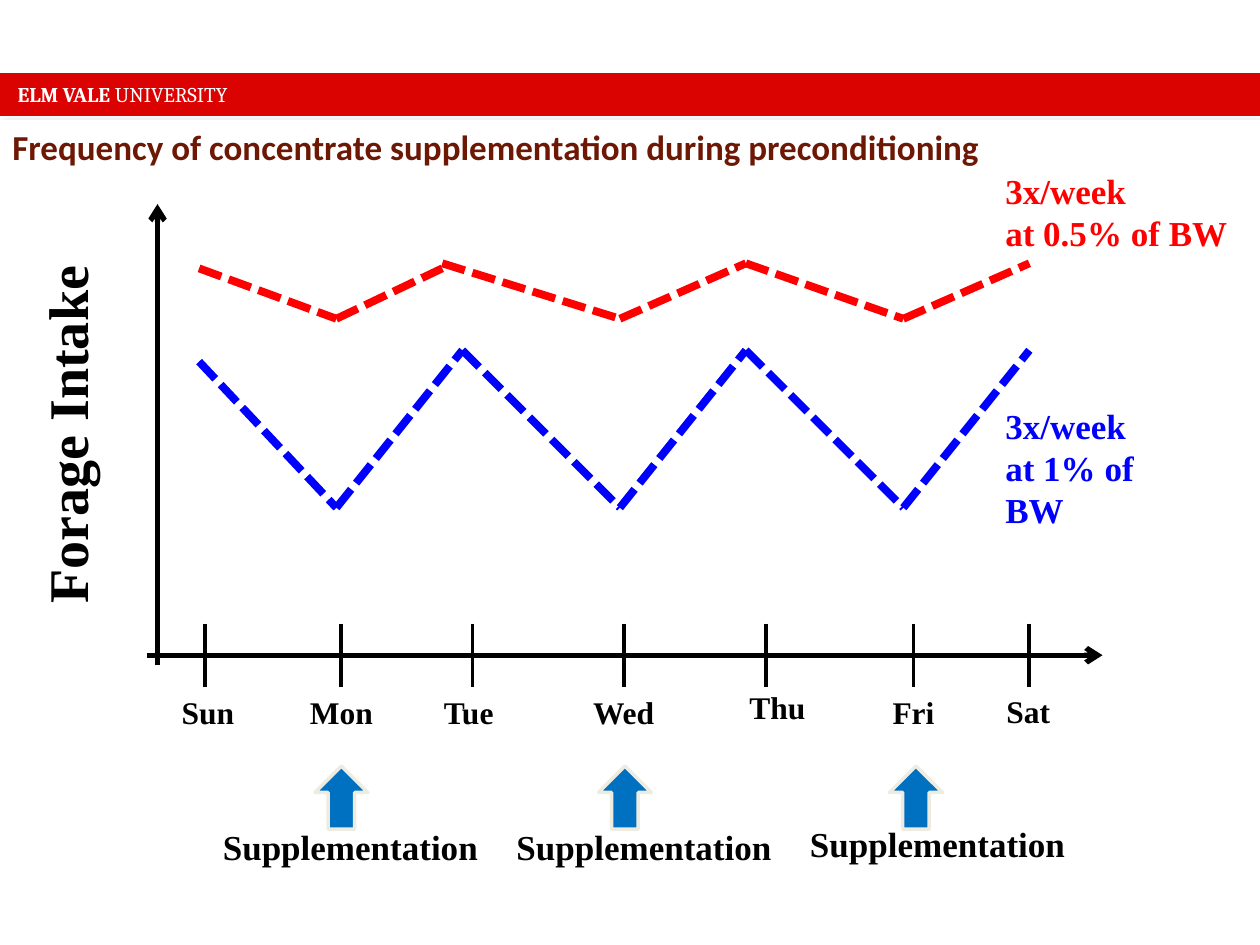
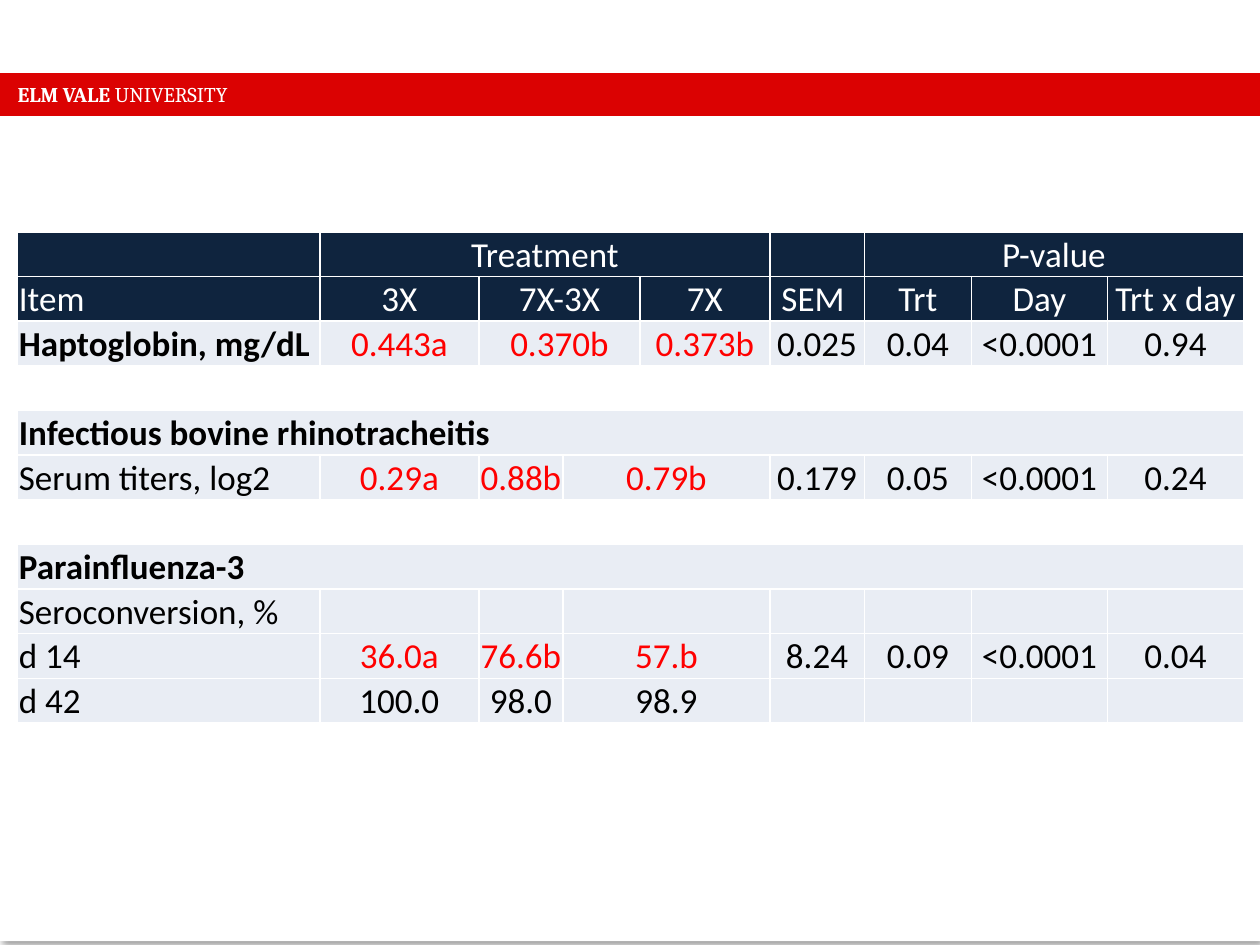
"""Build two slides on how often cattle get feed supplements."""
from dataclasses import dataclass
from itertools import pairwise

from lxml import etree
from pptx import Presentation
from pptx.dml.color import RGBColor
from pptx.enum.dml import MSO_LINE
from pptx.enum.shapes import MSO_CONNECTOR, MSO_SHAPE
from pptx.enum.text import MSO_ANCHOR, PP_ALIGN
from pptx.oxml.ns import qn
from pptx.util import Inches, Pt

RECT, ARROW = MSO_SHAPE.RECTANGLE, MSO_SHAPE.UP_ARROW
LINE, DASH = MSO_CONNECTOR.STRAIGHT, MSO_LINE.SQUARE_DOT
LEFT, MID = PP_ALIGN.LEFT, PP_ALIGN.CENTER
TOP, CENTER, LOW = MSO_ANCHOR.TOP, MSO_ANCHOR.MIDDLE, MSO_ANCHOR.BOTTOM

HUES = {
    "black": "000000", "white": "FFFFFF", "red": "FF0000", "blue": "0000FF",
    "band": "DB0202", "title": "6D1705", "arrow": "0070C0", "edge": "EEECE1",
    "navy": "0F243E", "pale": "E9EDF4",
}
SANS, SERIF, BRAND = "Calibri", "Times New Roman", "Cambria"

HEAD = (1, 4, 1, 3)
WIDE = (1, 1, 2, 1, 1, 1, 1, 1)
TITER = (1, 1, 1, 2, 1, 1, 1, 1)
FULL = (9,)


@dataclass(frozen=True)
class Label:
    text: str
    left: float
    top: float
    width: float
    height: float
    size: int = 20
    hue: str = "black"
    align: PP_ALIGN = LEFT
    turn: int = 0


@dataclass(frozen=True)
class Trace:
    hue: str
    points: tuple


@dataclass(frozen=True)
class Day:
    name: str
    tick: float
    left: float
    width: float = 0.7
    top: float = 5.45


@dataclass(frozen=True)
class Feed:
    arrow: float
    left: float
    top: float = 6.5


@dataclass(frozen=True)
class Row:
    cells: tuple
    spans: tuple
    fill: str = "pale"
    bold: bool = False


DAYS = (
    Day("Sun", 1.63, 1.3), Day("Mon", 2.71, 2.36), Day("Tue", 3.75, 3.37),
    Day("Wed", 4.95, 4.6), Day("Thu", 6.08, 5.73, 0.88, 5.41),
    Day("Fri", 7.25, 6.81, 0.88), Day("Sat", 8.17, 7.72, 0.88, 5.44),
)
FEEDS = (Feed(2.5, 1.67), Feed(4.75, 4), Feed(7.06, 6.33, 6.48))
TRACES = (
    Trace("blue", ((1.58, 2.87), (2.67, 4.03), (3.67, 2.78), (4.92, 4.03),
                   (5.92, 2.78), (7.17, 4.03), (8.17, 2.78))),
    Trace("red", ((1.58, 2.13), (2.67, 2.53), (3.51, 2.13))),
    Trace("red", ((3.51, 2.09), (4.92, 2.53), (5.92, 2.09), (7.17, 2.53),
                  (8.17, 2.09))),
)
LABELS = (
    Label("Forage Intake", -1.08, 2.96, 3.22, 0.64, 32, turn=270),
    Label("3x/week\nat 0.5% of BW", 7.88, 1.3, 2.12, 0.77, hue="red"),
    Label("3x/week\nat 1% of BW", 7.88, 3.16, 1.75, 0.77, hue="blue"),
)
COLS = (2.4, 1.26, 0.67, 0.61, 1.03, 0.75, 0.85, 1.08, 1.08)
ROWS = (
    Row(("", "Treatment", "", "P-value"), HEAD, "navy"),
    Row(("Item", "3X", "7X-3X", "7X", "SEM ", "Trt", "Day", "Trt x day"),
        WIDE, "navy"),
    Row(("Haptoglobin, mg/dL", "0.443a", "0.370b", "0.373b", "0.025", "0.04",
         "<0.0001", "0.94"), WIDE, bold=True),
    Row(("",), FULL, "white"),
    Row(("Infectious bovine rhinotracheitis",), FULL, bold=True),
    Row(("Serum titers, log2", "0.29a", "0.88b", "0.79b", "0.179", "0.05",
         "<0.0001", "0.24"), TITER),
    Row(("",), FULL, "white"),
    Row(("Parainfluenza-3",), FULL, bold=True),
    Row(("Seroconversion, %",) + ("",) * 7, TITER),
    Row(("d 14", "36.0a", "76.6b", "57.b", "8.24", "0.09", "<0.0001", "0.04"),
        TITER),
    Row(("d 42", "100.0", "98.0", "98.9") + ("",) * 4, TITER),
)


def tint(name: str) -> RGBColor:
    return RGBColor.from_string(HUES[name])


def style(para, face: str, size: int, hue: str, bold: bool | None,
          align: PP_ALIGN = LEFT) -> None:
    para.alignment = align
    font = para.font
    font.name, font.size, font.bold = face, Pt(size), bold
    font.color.rgb = tint(hue)


def add_block(slide, kind, box: tuple, fill: str):
    block = slide.shapes.add_shape(kind, *map(Inches, box))
    block.shadow.inherit = False
    block.fill.solid()
    block.fill.fore_color.rgb = tint(fill)
    block.line.fill.background()
    return block


def add_line(slide, start: tuple, end: tuple, hue: str, width: float,
             dash=None, head: bool = False) -> None:
    line = slide.shapes.add_connector(LINE, *map(Inches, start + end))
    line.line.color.rgb = tint(hue)
    line.line.width = Pt(width)
    if dash:
        line.line.dash_style = dash
    if head:
        etree.SubElement(line.line._get_or_add_ln(), qn("a:tailEnd"),
                         type="arrow")
    etree.SubElement(line._element.spPr, qn("a:effectLst"))


def add_label(slide, item: Label) -> None:
    box = slide.shapes.add_textbox(
        *map(Inches, (item.left, item.top, item.width, item.height)))
    box.rotation = item.turn
    frame = box.text_frame
    frame.word_wrap = True
    frame.text = item.text
    for para in frame.paragraphs:
        style(para, SERIF, item.size, item.hue, True, item.align)


def add_base(deck, top: float):
    slide = deck.slides.add_slide(deck.slide_layouts[6])
    panel = add_block(slide, RECT, (0, top, 10, 6.55), "white")
    glow = etree.SubElement(
        panel._element.spPr.find(qn("a:effectLst")), qn("a:outerShdw"),
        blurRad=str(Pt(4)), dist=str(Pt(3)), dir="2700000", rotWithShape="0")
    shade = etree.SubElement(glow, qn("a:srgbClr"), val=HUES["black"])
    etree.SubElement(shade, qn("a:alpha"), val="40000")

    band = add_block(slide, RECT, (0, 0.58, 10, 0.34), "band")
    frame = band.text_frame
    frame.margin_left = Inches(0.14)
    frame.vertical_anchor = CENTER
    para = frame.paragraphs[0]
    style(para, BRAND, 12, "white", None)
    for text, bold in (("ELM VALE ", True), ("UNIVERSITY", False)):
        run = para.add_run()
        run.text, run.font.bold = text, bold
    return slide, panel


def add_graph(deck) -> None:
    slide, panel = add_base(deck, 0.95)
    frame = panel.text_frame
    frame.vertical_anchor = TOP
    frame.text = "Frequency of concentrate supplementation during preconditioning"
    para = frame.paragraphs[0]
    style(para, SANS, 20, "title", True)
    para.space_before = Pt(4)

    add_line(slide, (1.25, 5.28), (1.25, 1.62), "black", 3, head=True)
    add_line(slide, (1.17, 5.2), (8.75, 5.2), "black", 3, head=True)
    for trace in TRACES:
        for start, end in pairwise(trace.points):
            add_line(slide, start, end, trace.hue, 4.5, DASH)
    for day in DAYS:
        add_line(slide, (day.tick, 4.95), (day.tick, 5.45), "black", 2.25)
        add_label(slide, Label(day.name, day.left, day.top, day.width, 0.4,
                               18, align=MID))
    for feed in FEEDS:
        arrow = add_block(slide, ARROW, (feed.arrow, 6.08, 0.42, 0.5), "arrow")
        arrow.line.color.rgb = tint("edge")
        arrow.line.width = Pt(2)
        add_label(slide, Label("Supplementation", feed.left, feed.top,
                               2.42, 0.44))
    for item in LABELS:
        add_label(slide, item)


def fill_cell(cell, text: str, row: Row, first: bool) -> None:
    cell.fill.solid()
    cell.fill.fore_color.rgb = tint(row.fill)
    cell.margin_left = cell.margin_right = cell.margin_top = Inches(0.01)
    cell.margin_bottom = 0
    cell.vertical_anchor = LOW
    cell.text = text
    differs = text[:1].isdigit() and text[-1] in "ab"
    hue = "white" if row.fill == "navy" else "red" if differs else "black"
    style(cell.text_frame.paragraphs[0], SANS, 20, hue, row.bold and first,
          LEFT if first else MID)


def add_stats(deck) -> None:
    slide, _ = add_base(deck, 0.92)
    table = slide.shapes.add_table(
        len(ROWS), len(COLS), *map(Inches, (0.14, 1.84, 9.72, 3.9))).table
    table.first_row = table.horz_banding = False
    for col, width in zip(table.columns, COLS):
        col.width = Inches(width)
    for y, row in enumerate(ROWS):
        x = 0
        for text, span in zip(row.cells, row.spans):
            cell = table.cell(y, x)
            if span > 1:
                cell.merge(table.cell(y, x + span - 1))
            fill_cell(cell, text, row, x == 0)
            x += span


def main() -> None:
    deck = Presentation()
    deck.slide_width, deck.slide_height = Inches(10), Inches(7.5)
    add_graph(deck)
    add_stats(deck)
    deck.save("out.pptx")


if __name__ == "__main__":
    main()
